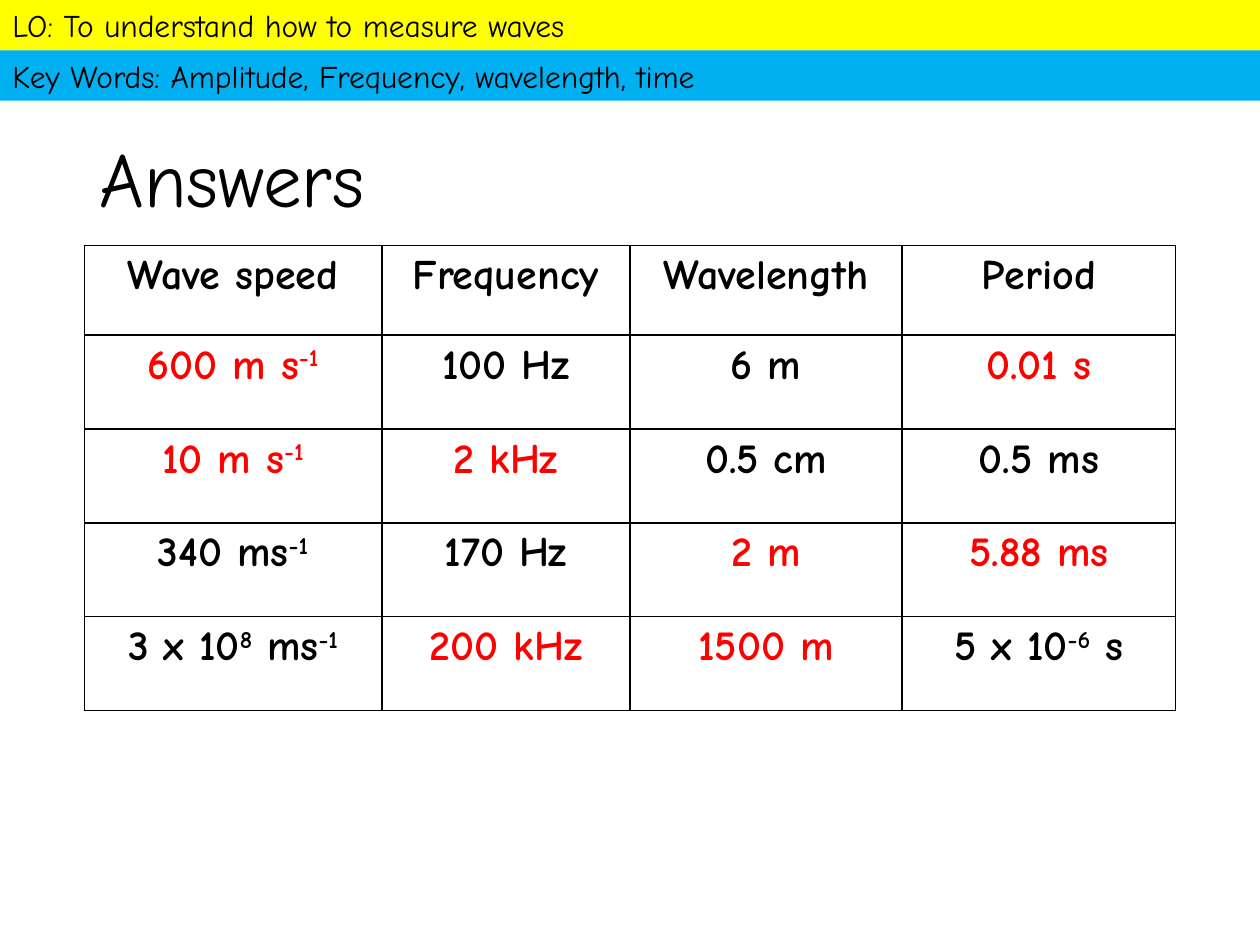
from lxml import etree
from pptx import Presentation
from pptx.dml.color import RGBColor
from pptx.enum.shapes import MSO_SHAPE
from pptx.enum.text import MSO_ANCHOR, PP_ALIGN
from pptx.oxml.ns import qn
from pptx.util import Inches, Pt

RECTANGLE = MSO_SHAPE.RECTANGLE
TOP, MIDDLE = MSO_ANCHOR.TOP, MSO_ANCHOR.MIDDLE
LEFT, CENTER = PP_ALIGN.LEFT, PP_ALIGN.CENTER

WIDTH, HEIGHT = Inches(10), Inches(7.5)
COLUMN, ROW = WIDTH / 100, HEIGHT / 75
COLORS = {
    "objective": "FFFF00",
    "keywords": "00B0F0",
    "given": "000000",
    "answer": "FF0000",
    "page": "FFFFFF",
}
BAR_FONT = {"name": "Comic Neue", "size": Pt(18)}
TITLE_FONT = {"name": "Comic Neue", "size": Pt(44)}
CELL_FONT = {"name": "Comic Neue", "size": Pt(24), "bold": True}
SUPERSCRIPT = "30000"
BORDER_SIDES = ("a:lnL", "a:lnR", "a:lnT", "a:lnB")

BARS = [
    ("objective", "LO: To understand how to measure waves"),
    ("keywords", "Key Words: Amplitude, Frequency, wavelength, time"),
]
# A leading * marks an answer; text between ^ signs is raised.
WAVES = [
    ["Wave speed", "Frequency", "Wavelength", "Period"],
    ["*600 m s^-1^", "100 Hz", "6 m", "*0.01 s"],
    ["*10 m s^-1^", "*2 kHz", "0.5 cm", "0.5 ms"],
    ["340 ms^-1^", "170 Hz", "*2 m", "*5.88 ms"],
    ["3 x 10^8^ ms^-1^", "*200 kHz", "*1500 m", "5 x 10^-6^ s"],
]
TABLE_COLUMNS = [23.6, 19.7, 21.6, 21.7]
TABLE_ROWS = [7.1] + [7.45] * 4


def color(name):
    return RGBColor.from_string(COLORS[name])


def place(left, top, width, height):
    return (round(left * COLUMN), round(top * ROW),
            round(width * COLUMN), round(height * ROW))


def write(para, text, font, align=LEFT):
    para.alignment = align
    tone = "answer" if text.startswith("*") else "given"
    for index, part in enumerate(text.lstrip("*").split("^")):
        if not part:
            continue
        span = para.add_run()
        span.text = part
        for key, value in font.items():
            setattr(span.font, key, value)
        span.font.color.rgb = color(tone)
        if index % 2:
            span._r.get_or_add_rPr().set("baseline", SUPERSCRIPT)


def draw_bars(page, left, top, width, height):
    step = height / len(BARS)
    for index, (fill, text) in enumerate(BARS):
        bar = page.shapes.add_shape(
            RECTANGLE, *place(left, top + index * step, width, step))
        bar.shadow.inherit = False
        bar.fill.solid()
        bar.fill.fore_color.rgb = color(fill)
        bar.line.fill.background()
        bar.text_frame.word_wrap = True
        bar.text_frame.vertical_anchor = TOP
        write(bar.text_frame.paragraphs[0], text, BAR_FONT)


def draw_title(page, left, top, width, height):
    box = page.shapes.add_textbox(*place(left, top, width, height))
    box.text_frame.word_wrap = True
    box.text_frame.vertical_anchor = MIDDLE
    para = box.text_frame.paragraphs[0]
    para.line_spacing = 0.9
    write(para, "Answers", TITLE_FONT)


def add_borders(cell):
    properties = cell._tc.get_or_add_tcPr()
    for index, side in enumerate(BORDER_SIDES):
        line = etree.Element(qn(side), w=str(Pt(1)))
        fill = etree.SubElement(line, qn("a:solidFill"))
        etree.SubElement(fill, qn("a:srgbClr"), val=COLORS["given"])
        properties.insert(index, line)


def draw_table(page, left, top, width, height):
    table = page.shapes.add_table(
        len(TABLE_ROWS), len(TABLE_COLUMNS),
        *place(left, top, width, height)).table
    for column, share in zip(table.columns, TABLE_COLUMNS):
        column.width = round(width * share / sum(TABLE_COLUMNS) * COLUMN)
    for row, share, texts in zip(table.rows, TABLE_ROWS, WAVES):
        row.height = round(height * share / sum(TABLE_ROWS) * ROW)
        for cell, text in zip(row.cells, texts):
            cell.fill.solid()
            cell.fill.fore_color.rgb = color("page")
            add_borders(cell)
            write(cell.text_frame.paragraphs[0], text, CELL_FONT, CENTER)


def main():
    deck = Presentation()
    deck.slide_width, deck.slide_height = WIDTH, HEIGHT
    page = deck.slides.add_slide(deck.slide_layouts[6])
    draw_bars(page, 0, 0, 100, 8)
    draw_title(page, 6.9, 7.2, 86.2, 14.5)
    draw_table(page, 6.7, 19.5, 86.6, 36.9)
    deck.save("out.pptx")


if __name__ == "__main__":
    main()
